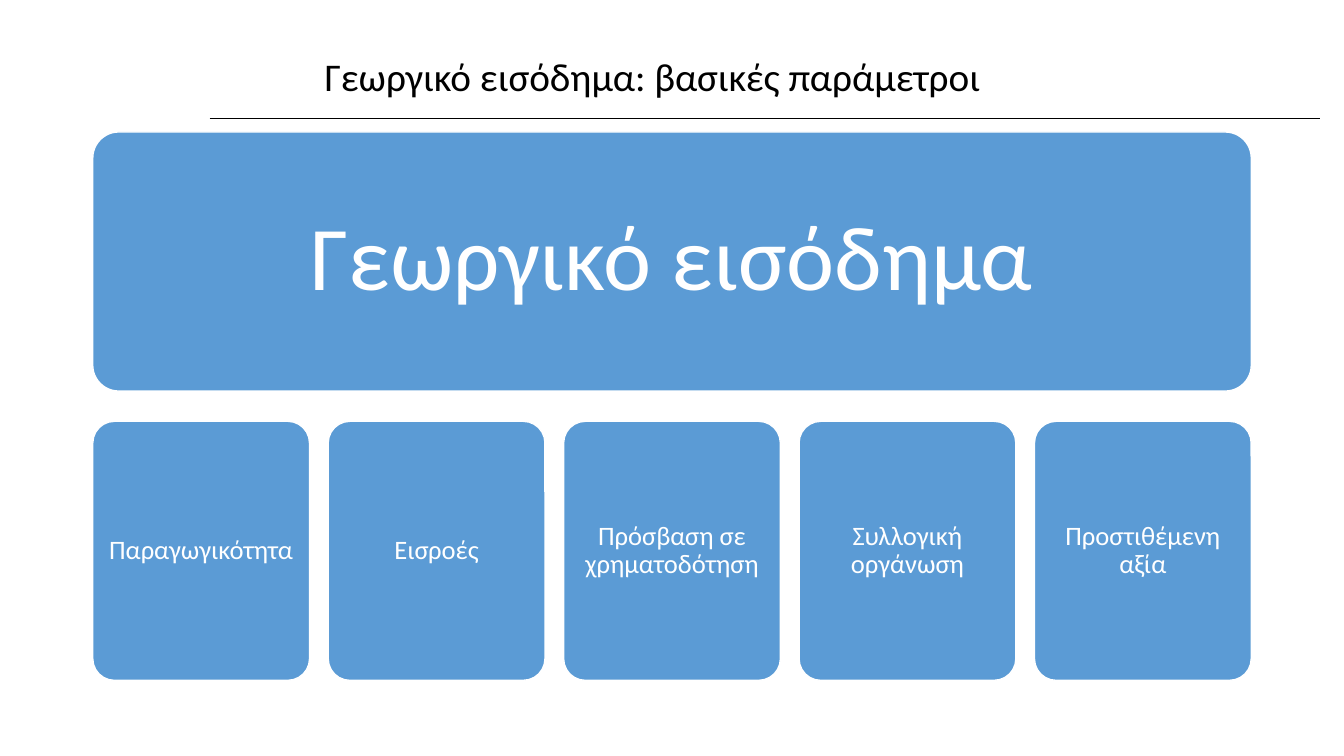
from lxml import etree
from pptx import Presentation
from pptx.dml.color import RGBColor
from pptx.enum.shapes import MSO_CONNECTOR, MSO_SHAPE
from pptx.enum.text import MSO_ANCHOR, MSO_AUTO_SIZE, PP_ALIGN
from pptx.oxml.ns import qn
from pptx.util import Inches, Pt

COLORS = {"text": "000000", "card": "5B9BD5", "white": "FFFFFF"}
FONT = "Calibri"
PARAMETERS = [
    "Παραγωγικότητα",
    "Εισροές",
    "Πρόσβαση σε χρηματοδότηση",
    "Συλλογική οργάνωση",
    "Προστιθέμενη αξία",
]


def color(name):
    return RGBColor.from_string(COLORS[name])


class IncomeSlide:
    def __init__(self, deck):
        self.page = deck.slides.add_slide(deck.slide_layouts[5])

    def set_text(self, shape, text, size, color_name, inset):
        frame = shape.text_frame
        frame.text = text
        frame.word_wrap = True
        frame.auto_size = MSO_AUTO_SIZE.NONE
        frame.vertical_anchor = MSO_ANCHOR.MIDDLE
        frame.margin_left = frame.margin_right = Inches(inset)
        frame.margin_top = frame.margin_bottom = Inches(inset)
        paragraph = frame.paragraphs[0]
        paragraph.alignment = PP_ALIGN.CENTER
        paragraph.line_spacing = 0.9
        paragraph.font.name = FONT
        paragraph.font.size = Pt(size)
        paragraph.font.color.rgb = color(color_name)

    def title(self, text, left, top, width, height):
        title = self.page.shapes.title
        title.left, title.top = Inches(left), Inches(top)
        title.width, title.height = Inches(width), Inches(height)
        self.set_text(title, text, 28, "text", 0.05)

    def rule(self, left, right, top):
        line = self.page.shapes.add_connector(
            MSO_CONNECTOR.STRAIGHT, Inches(left), Inches(top), Inches(right), Inches(top)
        )
        line.line.color.rgb = color("text")
        line.line.width = Pt(0.5)
        etree.SubElement(line._element.spPr, qn("a:effectLst"))

    def card(self, text, left, top, width, height, size, inset):
        card = self.page.shapes.add_shape(
            MSO_SHAPE.ROUNDED_RECTANGLE,
            Inches(left), Inches(top), Inches(width), Inches(height),
        )
        card.adjustments[0] = 0.1
        card.shadow.inherit = False
        card.fill.solid()
        card.fill.fore_color.rgb = color("card")
        card.line.color.rgb = color("white")
        card.line.width = Pt(1)
        self.set_text(card, text, size, "white", inset)


def main():
    deck = Presentation()
    deck.slide_width, deck.slide_height = Inches(13.33), Inches(7.5)
    slide = IncomeSlide(deck)

    # Heading with its rule
    slide.rule(2.08, 13.09, 1.17)
    slide.title("Γεωργικό εισόδημα: βασικές παράμετροι", 2.08, 0.4, 8.78, 0.77)

    # Income on top, its parameters spread evenly below
    left, width, height, card_width = 0.92, 11.49, 2.57, 2.15
    slide.card("Γεωργικό εισόδημα", left, 1.31, width, height, 65, 0.27)
    step = (width - card_width) / (len(PARAMETERS) - 1)
    for index, name in enumerate(PARAMETERS):
        slide.card(name, left + index * step, 4.18, card_width, height, 19, 0.08)

    deck.save("out.pptx")


if __name__ == "__main__":
    main()
